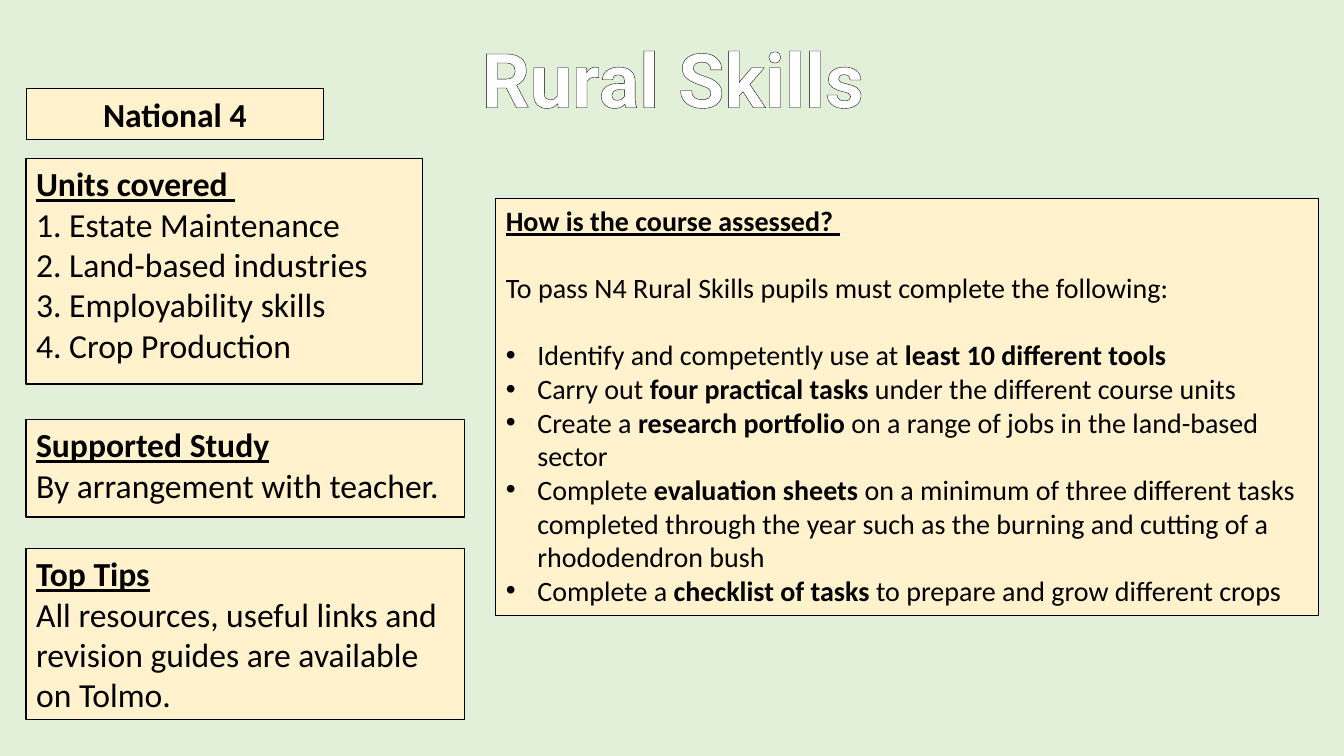
"""Build the Rural Skills course slide."""
from dataclasses import dataclass

from lxml import etree
from pptx import Presentation
from pptx.dml.color import RGBColor
from pptx.enum.shapes import MSO_SHAPE
from pptx.enum.text import MSO_ANCHOR, PP_ALIGN
from pptx.oxml.ns import qn
from pptx.util import Pt

RECT = MSO_SHAPE.RECTANGLE
TOP = MSO_ANCHOR.TOP
LEFT, CENTER = PP_ALIGN.LEFT, PP_ALIGN.CENTER
COLORS = {"background": "E2F0D9", "panel": "FFF2CC", "ink": "000000", "title": "FFFFFF"}
INDENT = 22.5
MARGIN_X = 18.72
WIDE = 313.2


@dataclass(frozen=True)
class Para:
    """A paragraph whose bold words stand between asterisks."""
    text: str
    heading: bool = False
    bullet: bool = False
    gap: float = 0


@dataclass(frozen=True)
class Panel:
    """A bordered box of text."""
    left: float
    top: float
    width: float
    height: float
    paras: tuple[Para, ...]
    size: float = 24
    border: float = 1


PANELS = (
    Panel(MARGIN_X, 113.04, 282.96, 161.28, (
        Para("Units covered ", heading=True),
        Para("1. Estate Maintenance"),
        Para("2. Land-based industries"),
        Para("3. Employability skills"),
        Para("4. Crop Production"),
    )),
    Panel(MARGIN_X, 299.52, WIDE, 69.84, (
        Para("Supported Study", heading=True),
        Para("By arrangement with teacher."),
    )),
    Panel(MARGIN_X, 391.68, WIDE, 122.4, (
        Para("Top Tips", heading=True),
        Para("All resources, useful links and revision guides are available on Tolmo."),
    )),
    Panel(354.24, 141.84, 587.52, 298.08, (
        Para("How is the course assessed? ", heading=True),
        Para("To pass N4 Rural Skills pupils must complete the following:", gap=24),
        Para("Identify and competently use at *least 10 different tools*", bullet=True, gap=24),
        Para("Carry out *four practical tasks* under the different course units", bullet=True),
        Para("Create a *research portfolio* on a range of jobs in the land-based sector", bullet=True),
        Para("Complete *evaluation sheets* on a minimum of three different tasks completed "
             "through the year such as the burning and cutting of a rhododendron bush", bullet=True),
        Para("Complete a *checklist of tasks* to prepare and grow different crops", bullet=True),
    ), size=20, border=0.75),
)


def rgb(name: str) -> RGBColor:
    """Look up a named colour."""
    return RGBColor.from_string(COLORS[name])


def style_font(font, name: str, size: float, color: str) -> None:
    """Set typeface, size and colour."""
    font.name = name
    font.size = Pt(size)
    font.color.rgb = rgb(color)


def add_bullet(p) -> None:
    """Give a paragraph a hanging round bullet."""
    pPr = p._p.get_or_add_pPr()
    pPr.set("marL", str(Pt(INDENT)))
    pPr.set("indent", str(-Pt(INDENT)))
    font = etree.Element(qn("a:buFont"), typeface="Arial")
    char = etree.Element(qn("a:buChar"), char="•")
    default = pPr.find(qn("a:defRPr"))
    default.addprevious(font)
    default.addprevious(char)


def outline_text(r, color: str, width: float) -> None:
    """Draw a line around the letters of a run."""
    ln = etree.Element(qn("a:ln"), w=str(Pt(width)))
    fill = etree.SubElement(ln, qn("a:solidFill"))
    etree.SubElement(fill, qn("a:srgbClr"), val=COLORS[color])
    r._r.get_or_add_rPr().insert(0, ln)


def add_para(p, para: Para, size: float) -> None:
    """Write one paragraph of a panel."""
    p.alignment = LEFT
    p.space_before = Pt(para.gap)
    style_font(p.font, "Calibri", size, "ink")
    if para.heading:
        p.font.bold = p.font.underline = True
    if para.bullet:
        add_bullet(p)
    for i, text in enumerate(para.text.split("*")):
        if text:
            r = p.add_run()
            r.text = text
            if i % 2:
                r.font.bold = True


def add_panel(s, panel: Panel):
    """Draw a panel with its paragraphs and return its text frame."""
    sp = s.shapes.add_shape(RECT, Pt(panel.left), Pt(panel.top), Pt(panel.width), Pt(panel.height))
    sp.shadow.inherit = False
    sp.fill.solid()
    sp.fill.fore_color.rgb = rgb("panel")
    sp.line.color.rgb = rgb("ink")
    sp.line.width = Pt(panel.border)
    tf = sp.text_frame
    tf.word_wrap = True
    tf.vertical_anchor = TOP
    for i, para in enumerate(panel.paras):
        add_para(tf.add_paragraph() if i else tf.paragraphs[0], para, panel.size)
    return tf


def add_level(s) -> None:
    """Draw the centred course level label."""
    tf = add_panel(s, Panel(MARGIN_X, 63.36, 212.4, 36, (Para("National 4"),), border=0.75))
    p = tf.paragraphs[0]
    p.alignment = CENTER
    p.font.bold = True


def add_title(s) -> None:
    """Draw the outlined slide title."""
    tf = s.shapes.add_textbox(Pt(148.32), Pt(19.44), Pt(664.56), Pt(74.88)).text_frame
    tf.word_wrap = True
    p = tf.paragraphs[0]
    p.alignment = CENTER
    style_font(p.font, "Roboto", 54, "title")
    p.font.bold = True
    r = p.add_run()
    r.text = "Rural Skills"
    outline_text(r, "ink", 2.25)


def main() -> None:
    """Build and save the slide."""
    prs = Presentation()
    prs.slide_width, prs.slide_height = Pt(960), Pt(540)
    s = prs.slides.add_slide(prs.slide_layouts[6])
    s.background.fill.solid()
    s.background.fill.fore_color.rgb = rgb("background")
    add_level(s)
    for panel in PANELS:
        add_panel(s, panel)
    add_title(s)
    prs.save("out.pptx")


if __name__ == "__main__":
    main()
